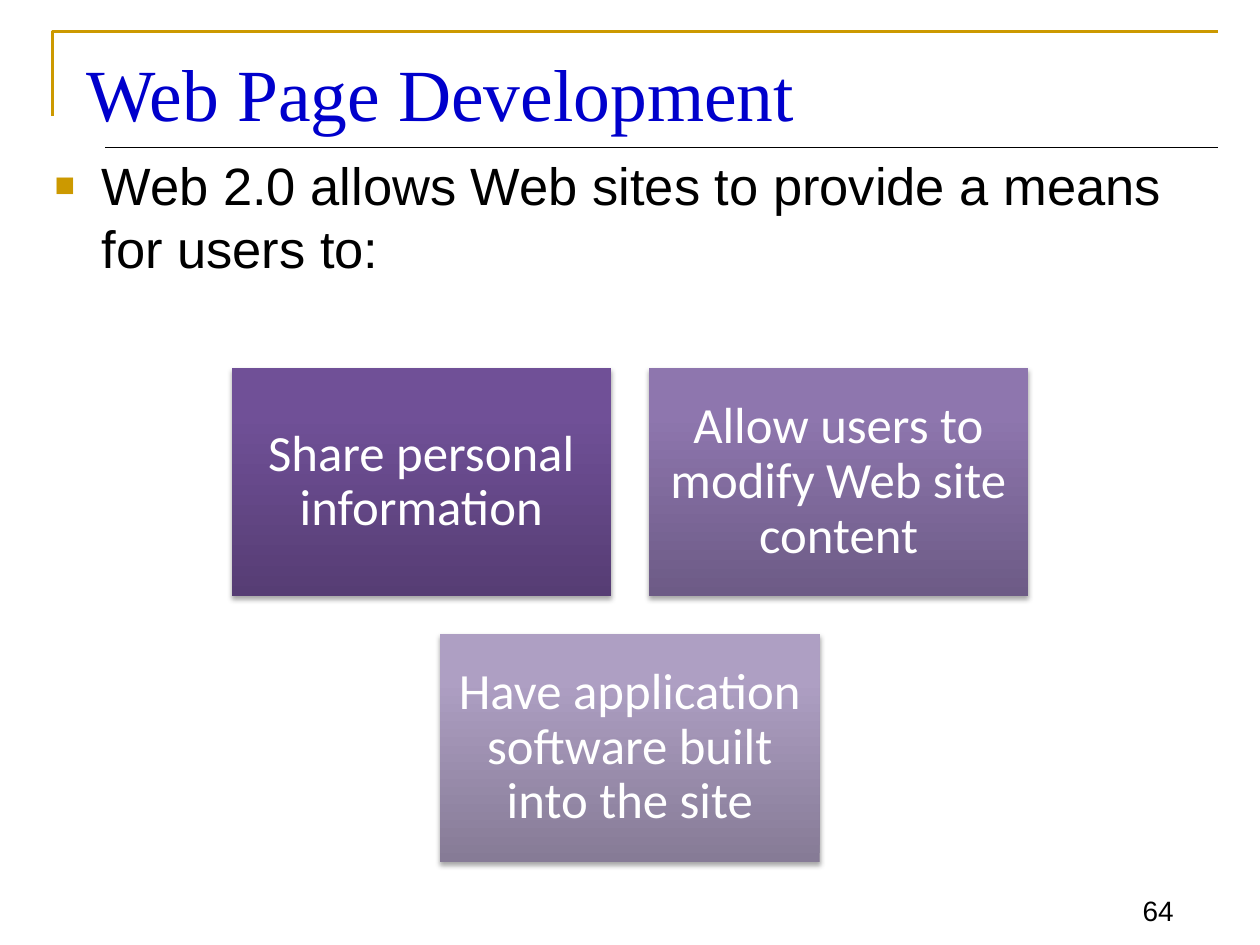
from copy import deepcopy

from lxml import etree
from pptx import Presentation
from pptx.dml.color import RGBColor
from pptx.enum.shapes import MSO_CONNECTOR, MSO_SHAPE
from pptx.enum.text import MSO_ANCHOR, MSO_AUTO_SIZE, PP_ALIGN
from pptx.oxml import parse_xml
from pptx.oxml.ns import nsdecls, qn
from pptx.util import Cm, Pt

STRAIGHT = MSO_CONNECTOR.STRAIGHT
RECTANGLE = MSO_SHAPE.RECTANGLE
TOP, MIDDLE, BOTTOM = MSO_ANCHOR.TOP, MSO_ANCHOR.MIDDLE, MSO_ANCHOR.BOTTOM
LEFT, CENTER, RIGHT = PP_ALIGN.LEFT, PP_ALIGN.CENTER, PP_ALIGN.RIGHT
NO_AUTOFIT = MSO_AUTO_SIZE.NONE
TITLE_ONLY = 5

COLORS = {
    "gold": "CC9900",
    "title": "0000CC",
    "text": "000000",
    "white": "FFFFFF",
}
GRADIENT_POSITIONS = (0, 0.8, 1)
CARD_ROWS = [
    [
        ("Share personal information", ("563D74", "705097", "704F99")),
        ("Allow users to modify Web site content", ("6D5B86", "8E76AE", "8E75B0")),
    ],
    [("Have application software built into the site", ("867B96", "AE9FC3", "AE9FC4"))],
]


def rgb(name):
    """Return the palette colour with the given name."""
    return RGBColor.from_string(COLORS[name])


def add_run(paragraph, text, font_name, size, color):
    """Append one formatted run to a paragraph."""
    run = paragraph.add_run()
    run.text = text
    run.font.name = font_name
    run.font.size = Pt(size)
    run.font.color.rgb = rgb(color)


def prepare_frame(shape, anchor, alignment):
    """Set wrapping, anchor and alignment, and return the first paragraph."""
    frame = shape.text_frame
    frame.word_wrap = True
    frame.auto_size = NO_AUTOFIT
    frame.vertical_anchor = anchor
    paragraph = frame.paragraphs[0]
    paragraph.alignment = alignment
    return paragraph


def add_frame_lines(slide, left, top, width):
    """Draw the gold corner and the thin rule below the title."""
    builder = slide.shapes.build_freeform(left, top + Cm(1.7), scale=1.0)
    builder.add_line_segments([(left, top), (left + width, top)], close=False)
    corner = builder.convert_to_shape()
    corner.shadow.inherit = False
    corner.fill.background()
    corner.line.color.rgb = rgb("gold")
    corner.line.width = Pt(1.5)

    rule_top = top + Cm(2.33)
    rule = slide.shapes.add_connector(
        STRAIGHT, left + Cm(1.06), rule_top, left + width, rule_top
    )
    rule.line.color.rgb = rgb("text")
    rule.line.width = Pt(0.75)
    etree.SubElement(rule._element.spPr, qn("a:effectLst"))


def add_title(slide, left, top, width, height):
    """Place and format the title placeholder."""
    title = slide.shapes.title
    title.left, title.top, title.width, title.height = left, top, width, height
    paragraph = prepare_frame(title, TOP, LEFT)
    add_run(paragraph, "Web Page Development", "Times New Roman", 42, "title")


def add_introduction(slide, left, top, width, height):
    """Add the bulleted sentence above the cards."""
    box = slide.shapes.add_textbox(left, top, width, height)
    paragraph = prepare_frame(box, TOP, LEFT)
    properties = paragraph._p.get_or_add_pPr()
    properties.set("marL", str(Cm(0.95)))
    properties.set("indent", str(-Cm(0.95)))
    bullet_color = etree.SubElement(properties, qn("a:buClr"))
    etree.SubElement(bullet_color, qn("a:srgbClr"), val=COLORS["gold"])
    etree.SubElement(properties, qn("a:buSzPct"), val="65000")
    etree.SubElement(properties, qn("a:buFont"), typeface="Arial")
    etree.SubElement(properties, qn("a:buChar"), char="■")
    sentence = "Web 2.0 allows Web sites to provide a means for users to:"
    add_run(paragraph, sentence, "Arial", 30, "text")


def fill_gradient(shape, stop_colors):
    """Fill a shape with a three-stop gradient that rises from the bottom."""
    shape.fill.gradient()
    shape.fill.gradient_angle = 90
    stop_list = shape._element.spPr.find(".//" + qn("a:gsLst"))
    stop_list.append(deepcopy(stop_list[0]))
    stops = shape.fill.gradient_stops
    for stop, position, color in zip(stops, GRADIENT_POSITIONS, stop_colors):
        stop.position = position
        stop.color.rgb = RGBColor.from_string(color)


def add_shadow(shape):
    """Give a shape a soft shadow that falls downwards."""
    shape.shadow.inherit = False
    shape._element.spPr.find(qn("a:effectLst")).append(parse_xml(
        f'<a:outerShdw {nsdecls("a")} blurRad="{Pt(3.1)}" dist="{Pt(1.8)}" '
        'dir="5400000" rotWithShape="0"><a:srgbClr val="000000">'
        '<a:alpha val="35000"/></a:srgbClr></a:outerShdw>'
    ))


def add_card(slide, left, top, width, height, text, stop_colors):
    """Add one gradient card with centred text."""
    card = slide.shapes.add_shape(RECTANGLE, left, top, width, height)
    fill_gradient(card, stop_colors)
    card.line.fill.background()
    add_shadow(card)
    paragraph = prepare_frame(card, MIDDLE, CENTER)
    frame = card.text_frame
    frame.margin_left = frame.margin_right = Cm(0.3)
    frame.margin_top = frame.margin_bottom = Cm(0.3)
    paragraph.line_spacing = 0.9
    add_run(paragraph, text, "Calibri", 29, "white")


def add_cards(slide, left, top, width, height):
    """Lay out the rows of cards, each row centred in the box."""
    gap = Cm(0.76)
    card_width = (width - gap) // 2
    card_height = (height - gap) // 2
    for row, cards in enumerate(CARD_ROWS):
        row_width = len(cards) * (card_width + gap) - gap
        row_left = left + (width - row_width) // 2
        row_top = top + row * (card_height + gap)
        for column, (text, stop_colors) in enumerate(cards):
            card_left = row_left + column * (card_width + gap)
            add_card(slide, card_left, row_top, card_width, card_height,
                     text, stop_colors)


def add_page_number(slide, left, top, width, height):
    """Add the page number at the bottom right."""
    box = slide.shapes.add_textbox(left, top, width, height)
    paragraph = prepare_frame(box, BOTTOM, RIGHT)
    add_run(paragraph, "64", "Arial", 16, "text")


def main():
    """Build the slide and save it."""
    presentation = Presentation()
    presentation.slide_width = Cm(25.4)
    presentation.slide_height = Cm(19.05)
    slide = presentation.slides.add_slide(presentation.slide_layouts[TITLE_ONLY])
    add_frame_lines(slide, Cm(1.06), Cm(0.64), Cm(23.5))
    add_title(slide, Cm(1.48), Cm(0.85), Cm(23.07), Cm(1.9))
    add_introduction(slide, Cm(0.85), Cm(2.96), Cm(23.7), Cm(3.18))
    add_cards(slide, Cm(4.67), Cm(7.42), Cm(16.06), Cm(9.95))
    add_page_number(slide, Cm(22.23), Cm(17.57), Cm(1.68), Cm(1.25))
    presentation.save("out.pptx")


if __name__ == "__main__":
    main()
